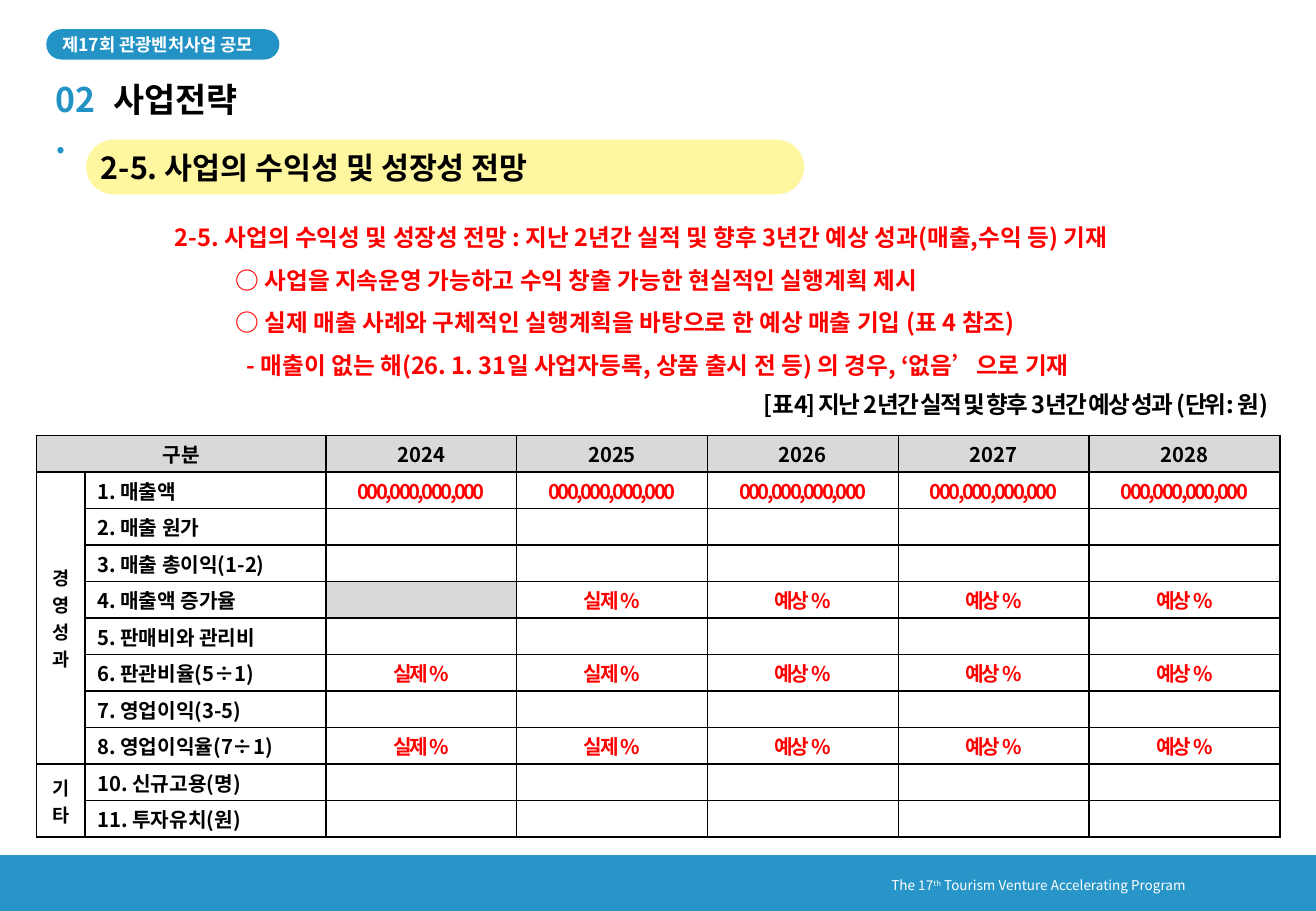
import pptx
import pptx.util
import pptx.dml.color
import pptx.enum.shapes
import pptx.enum.text
import pptx.oxml
import pptx.oxml.ns
from lxml import etree

Pt = pptx.util.Pt
RGBColor = pptx.dml.color.RGBColor
Align = pptx.enum.text.PP_ALIGN
Shape = pptx.enum.shapes.MSO_SHAPE
MIDDLE = pptx.enum.text.MSO_ANCHOR.MIDDLE
qn = pptx.oxml.ns.qn

BLACK = RGBColor(0x00, 0x00, 0x00)
WHITE = RGBColor(0xFF, 0xFF, 0xFF)
RED = RGBColor(0xFF, 0x00, 0x00)
BLUE = RGBColor(0x23, 0x93, 0xC5)
BAR = RGBColor(0x27, 0x95, 0xC7)
YELLOW = RGBColor(0xFF, 0xF7, 0xA0)
GRAY = RGBColor(0xD9, 0xD9, 0xD9)
FONT = "Noto Sans CJK KR"

YEARS = ["2024", "2025", "2026", "2027", "2028"]
ITEMS = ["1. 매출액", "2. 매출 원가", "3. 매출 총이익(1-2)", "4. 매출액 증가율",
         "5. 판매비와 관리비", "6. 판관비율(5÷1)", "7. 영업이익(3-5)",
         "8. 영업이익율(7÷1)", "10. 신규고용(명)", "11. 투자유치(원)"]
RATES = ["실제 %"] * 2 + ["예상 %"] * 3
VALUES = {1: ["000,000,000,000"] * 5, 4: [""] + RATES[1:], 6: RATES, 8: RATES}
GROUPS = {1: ("경영성과", 8), 9: ("기타", 10)}
GUIDE = [
    ("2-5. 사업의 수익성 및 성장성 전망 : 지난 2년간 실적 및 향후 3년간 예상 성과(매출,수익 등) 기재", 0),
    ("○ 사업을 지속운영 가능하고 수익 창출 가능한 현실적인 실행계획 제시", 36),
    ("○ 실제 매출 사례와 구체적인 실행계획을 바탕으로 한 예상 매출 기입 (표 4 참조)", 36),
    ("- 매출이 없는 해(26. 1. 31일 사업자등록, 상품 출시 전 등) 의 경우, ‘없음’으로 기재", 42.5),
]


def write(para, text, size=12, color=BLACK, bold=True, space=0, base=0, align=None):
    """Add a run to the paragraph; space is the letter spacing in points."""
    if align is not None:
        para.alignment = align
    run = para.add_run()
    run.text = text
    font = run.font
    font.size, font.bold, font.name = Pt(size), bold, FONT
    font.color.rgb = color
    props = run._r.get_or_add_rPr()
    etree.SubElement(props, qn("a:ea")).set("typeface", FONT)
    if space:
        props.set("spc", str(round(space * 100)))
    if base:
        props.set("baseline", str(base * 1000))


def border(cell):
    props = cell._tc.get_or_add_tcPr()
    for place, side in enumerate(("lnL", "lnR", "lnT", "lnB")):
        line = etree.Element(qn("a:" + side), w=str(Pt(1)))
        fill = etree.SubElement(line, qn("a:solidFill"))
        etree.SubElement(fill, qn("a:srgbClr")).set("val", str(BLACK))
        props.insert(place, line)


class Deck:
    def __init__(self, wide, high):
        self.show = pptx.Presentation()
        self.show.slide_width, self.show.slide_height = Pt(wide), Pt(high)
        self.slide = self.show.slides.add_slide(self.show.slide_layouts[6])

    def shape(self, kind, box, fill, left=0, right=0):
        item = self.slide.shapes.add_shape(kind, *map(Pt, box))
        item.shadow.inherit = False
        item.fill.solid()
        item.fill.fore_color.rgb = fill
        item.line.fill.background()
        frame = item.text_frame
        frame.vertical_anchor = MIDDLE
        frame.margin_left, frame.margin_right = Pt(left), Pt(right)
        frame.margin_top = frame.margin_bottom = 0
        return item

    def pill(self, box, fill, text, align, left=0, right=0, **style):
        item = self.shape(Shape.ROUNDED_RECTANGLE, box, fill, left, right)
        item.adjustments[0] = 0.5
        write(item.text_frame.paragraphs[0], text, align=align, **style)

    def text(self, box, inset=True):
        frame = self.slide.shapes.add_textbox(*map(Pt, box)).text_frame
        frame.word_wrap = True
        if not inset:
            frame.margin_left = frame.margin_right = 0
            frame.margin_top = frame.margin_bottom = 0
        return frame

    def cell(self, cell, text="", fill=WHITE, align=Align.CENTER, **style):
        cell.fill.solid()
        cell.fill.fore_color.rgb = fill
        cell.vertical_anchor = MIDDLE
        cell.margin_top = cell.margin_bottom = Pt(1.8)
        border(cell)
        para = cell.text_frame.paragraphs[0]
        if text:
            write(para, text, align=align, **style)
        else:
            etree.SubElement(para._p, qn("a:endParaRPr")).set("sz", "1200")

    def table(self, left, top, cols, rows, high):
        grid = self.slide.shapes.add_table(
            rows, len(cols), Pt(left), Pt(top), Pt(sum(cols)), Pt(rows * high)).table
        grid.first_row = grid.horz_banding = False
        for col, wide in zip(grid.columns, cols):
            col.width = Pt(wide)
        for row in grid.rows:
            row.height = Pt(high)
        return grid


def main():
    deck = Deck(780, 540)

    deck.shape(Shape.RECTANGLE, (0, 506.9, 780, 33.1), BAR)
    para = deck.text((521.3, 516.2, 224, 17.3)).paragraphs[0]
    for text, base in (("The 17", 0), ("th", 30), (" Tourism Venture Accelerating Program", 0)):
        write(para, text, size=8, color=WHITE, bold=False, base=base)

    frame = deck.text((96.5, 120.2, 671, 108.7))
    for spot, (text, left) in enumerate(GUIDE):
        para = frame.add_paragraph() if spot else frame.paragraphs[0]
        para.line_spacing = 1.5
        props = para._p.get_or_add_pPr()
        props.set("marL", str(Pt(left + 18)))
        props.set("indent", str(Pt(-18)))
        write(para, text, size=14, color=RED, align=Align.JUSTIFY)

    para = deck.text((42.5, 227.5, 716.4, 24.5)).paragraphs[0]
    write(para, "[표4] 지난 2년간 실적 및 향후 3년간 예상 성과 (단위: 원)",
          size=14, space=-1.2, align=Align.RIGHT)

    grid = deck.table(21.6, 258.2, [28.8, 142.8] + [113.1] * 5, 11, 21.65)
    for col, text in enumerate(["구분", ""] + YEARS):
        deck.cell(grid.cell(0, col), text, GRAY)
    for row, item in enumerate(ITEMS, 1):
        deck.cell(grid.cell(row, 0), GROUPS.get(row, ("",))[0], size=11)
        deck.cell(grid.cell(row, 1), item, align=Align.LEFT)
        for col, text in enumerate(VALUES.get(row, [""] * 5), 2):
            fill = GRAY if (row, col) == (4, 2) else WHITE
            deck.cell(grid.cell(row, col), text, fill, color=RED, space=-1.5)
    grid.cell(0, 0).merge(grid.cell(0, 1))
    for first, (_, last) in GROUPS.items():
        grid.cell(first, 0).merge(grid.cell(last, 0))

    for left, wide, text, color in ((33.1, 25.2, "02.", BLUE), (67, 309.6, "사업전략", BLACK)):
        para = deck.text((left, 46.8, wide, 24.5), inset=False).paragraphs[0]
        para.space_after = Pt(2.4)
        write(para, text, size=20, color=color)

    deck.pill((27.4, 17.3, 138.2, 18), BLUE, "제17회 관광벤처사업 공모", Align.CENTER,
              right=6, size=10.5, color=WHITE)
    deck.pill((51.1, 82.8, 425.5, 32.4), YELLOW, "2-5. 사업의 수익성 및 성장성 전망",
              Align.LEFT, left=4, size=18)

    deck.show.save("out.pptx")


if __name__ == "__main__":
    main()
